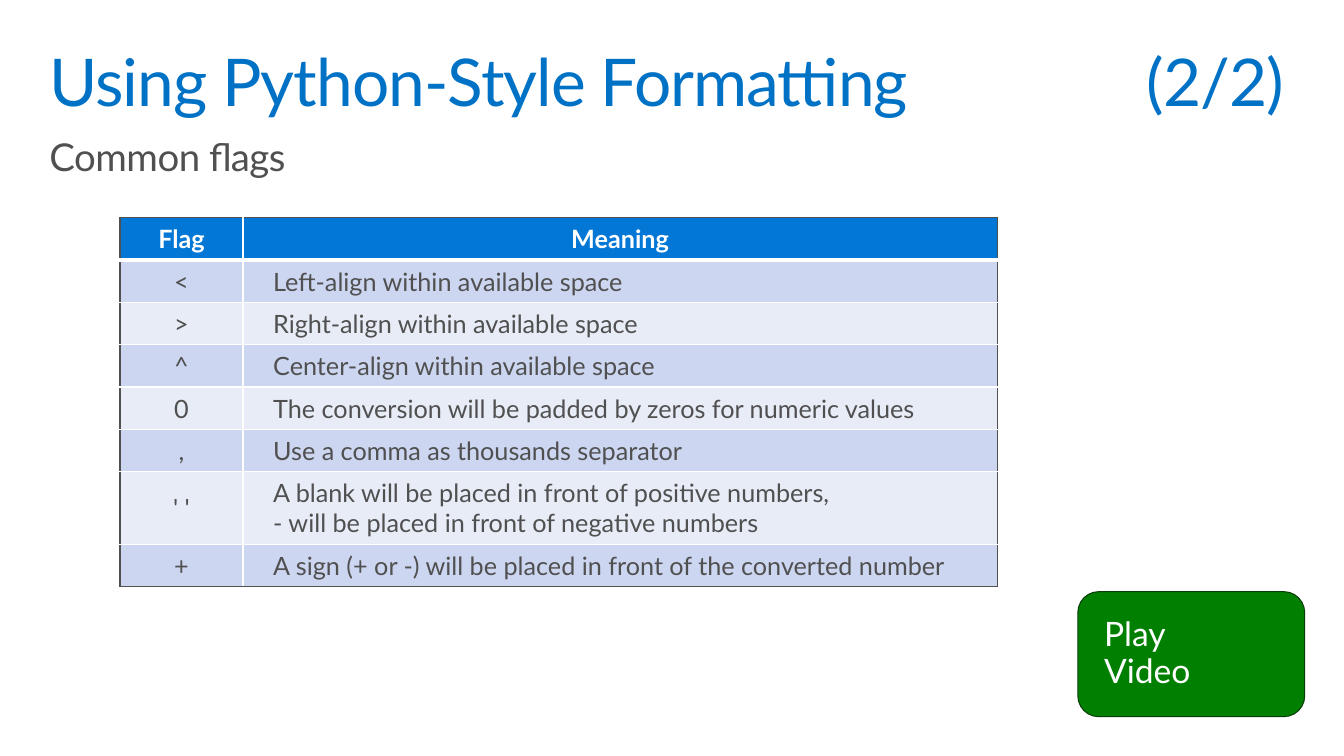
import dataclasses

import pptx
import pptx.dml.color
import pptx.enum.shapes
import pptx.enum.text
import pptx.oxml
import pptx.oxml.ns
import pptx.util

Inches = pptx.util.Inches
Pt = pptx.util.Pt
PP_ALIGN = pptx.enum.text.PP_ALIGN
MIDDLE = pptx.enum.text.MSO_ANCHOR.MIDDLE


@dataclasses.dataclass(frozen=True)
class Theme:
    font: str = "Lato"
    title_color: str = "0072C6"
    text_color: str = "505050"
    white: str = "FFFFFF"
    header_fill: str = "0377D6"
    band_fills: tuple = ("CCD6F0", "E7ECF7")
    button_fill: str = "007F00"
    button_line: str = "083E08"
    title_size: float = 47
    subtitle_size: float = 27.4
    button_size: float = 24
    table_size: float = 18


THEME = Theme()

FLAG_ROWS = [
    ("Flag", "Meaning"),
    ("<", "Left-align within available space"),
    (">", "Right-align within available space"),
    ("^", "Center-align within available space"),
    ("0", "The conversion will be padded by zeros for numeric values"),
    (",", "Use a comma as thousands separator"),
    ("' '", "A blank will be placed in front of positive numbers,\n"
            "- will be placed in front of negative numbers"),
    ("+", "A sign (+ or -) will be placed in front of the converted number"),
]


def rgb(color):
    return pptx.dml.color.RGBColor.from_string(color)


def style_paragraph(paragraph, size, color, bold=False, alignment=PP_ALIGN.LEFT):
    paragraph.alignment = alignment
    font = paragraph.font
    font.name = THEME.font
    font.size = Pt(size)
    font.bold = bold
    font.color.rgb = rgb(color)


def set_margins(target, horizontal, vertical):
    target.margin_left = target.margin_right = Inches(horizontal)
    target.margin_top = target.margin_bottom = Inches(vertical)


def add_right_tab(paragraph, position):
    properties = paragraph._p.get_or_add_pPr()
    tab_list = pptx.oxml.parse_xml(
        f'<a:tabLst {pptx.oxml.ns.nsdecls("a")}>'
        f'<a:tab pos="{Inches(position)}" algn="r"/></a:tabLst>'
    )
    properties.append(tab_list)


def add_heading(slide, top, text, size, color, tracking, tab_position=None):
    shape = slide.shapes.add_textbox(Inches(0.39), Inches(top), Inches(12.55), Inches(0.88))
    frame = shape.text_frame
    frame.word_wrap = True
    set_margins(frame, 0.1, 0.1)
    paragraph = frame.paragraphs[0]
    paragraph.text = text
    if tab_position:
        add_right_tab(paragraph, tab_position)
    paragraph.line_spacing = 0.9
    style_paragraph(paragraph, size, color)
    for run in paragraph.runs:
        run._r.get_or_add_rPr().set("spc", str(round(tracking * 100)))


def add_button(slide, text):
    shape = slide.shapes.add_shape(
        pptx.enum.shapes.MSO_SHAPE.ROUNDED_RECTANGLE,
        Inches(10.69), Inches(5.87), Inches(2.25), Inches(1.24),
    )
    shape.shadow.inherit = False
    shape.fill.solid()
    shape.fill.fore_color.rgb = rgb(THEME.button_fill)
    shape.line.color.rgb = rgb(THEME.button_line)
    shape.line.width = Pt(0.75)
    frame = shape.text_frame
    frame.word_wrap = True
    frame.vertical_anchor = MIDDLE
    set_margins(frame, 0.2, 0.16)
    paragraph = frame.paragraphs[0]
    paragraph.text = text
    paragraph.line_spacing = 0.9
    style_paragraph(paragraph, THEME.button_size, THEME.white)


def add_border(cell, side, color, width):
    border = pptx.oxml.parse_xml(
        f'<a:ln{side} {pptx.oxml.ns.nsdecls("a")} w="{Pt(width)}">'
        f'<a:solidFill><a:srgbClr val="{color}"/></a:solidFill></a:ln{side}>'
    )
    cell._tc.get_or_add_tcPr().append(border)


def format_cell(cell, text, row, column, last_row, last_column):
    is_header = row == 0
    outer_sides = {
        "L": column == 0,
        "R": column == last_column,
        "T": is_header,
        "B": row == last_row,
    }
    for side, is_outer in outer_sides.items():
        color = THEME.text_color if is_outer else THEME.white
        add_border(cell, side, color, 3 if is_header and side == "B" else 1)
    cell.fill.solid()
    fill = THEME.header_fill if is_header else THEME.band_fills[(row - 1) % 2]
    cell.fill.fore_color.rgb = rgb(fill)
    cell.vertical_anchor = MIDDLE
    set_margins(cell, 0.3, 0.06)
    paragraph = cell.text_frame.paragraphs[0]
    paragraph.text = text
    centered = is_header or column == 0
    style_paragraph(
        paragraph,
        THEME.table_size,
        THEME.white if is_header else THEME.text_color,
        bold=is_header,
        alignment=PP_ALIGN.CENTER if centered else PP_ALIGN.LEFT,
    )


def add_flag_table(slide, rows):
    widths = (1.22, 7.48)
    row_height = 0.41
    table = slide.shapes.add_table(
        len(rows), len(widths), Inches(1.19), Inches(2.16),
        Inches(sum(widths)), Inches(row_height * len(rows)),
    ).table
    table.horz_banding = False
    for column, width in zip(table.columns, widths):
        column.width = Inches(width)
    for row, texts in enumerate(rows):
        table.rows[row].height = Inches(row_height)
        for column, text in enumerate(texts):
            format_cell(table.cell(row, column), text, row, column,
                        len(rows) - 1, len(widths) - 1)


def main():
    presentation = pptx.Presentation()
    presentation.slide_width = Inches(13.33)
    presentation.slide_height = Inches(7.5)
    slide = presentation.slides.add_slide(presentation.slide_layouts[6])
    add_heading(slide, 0.39, "Using Python-Style Formatting\t(2/2)",
                THEME.title_size, THEME.title_color, -0.7, tab_position=12.25)
    add_heading(slide, 1.27, "Common flags",
                THEME.subtitle_size, THEME.text_color, -0.3)
    add_button(slide, "Play\nVideo")
    add_flag_table(slide, FLAG_ROWS)
    presentation.save("out.pptx")


if __name__ == "__main__":
    main()
